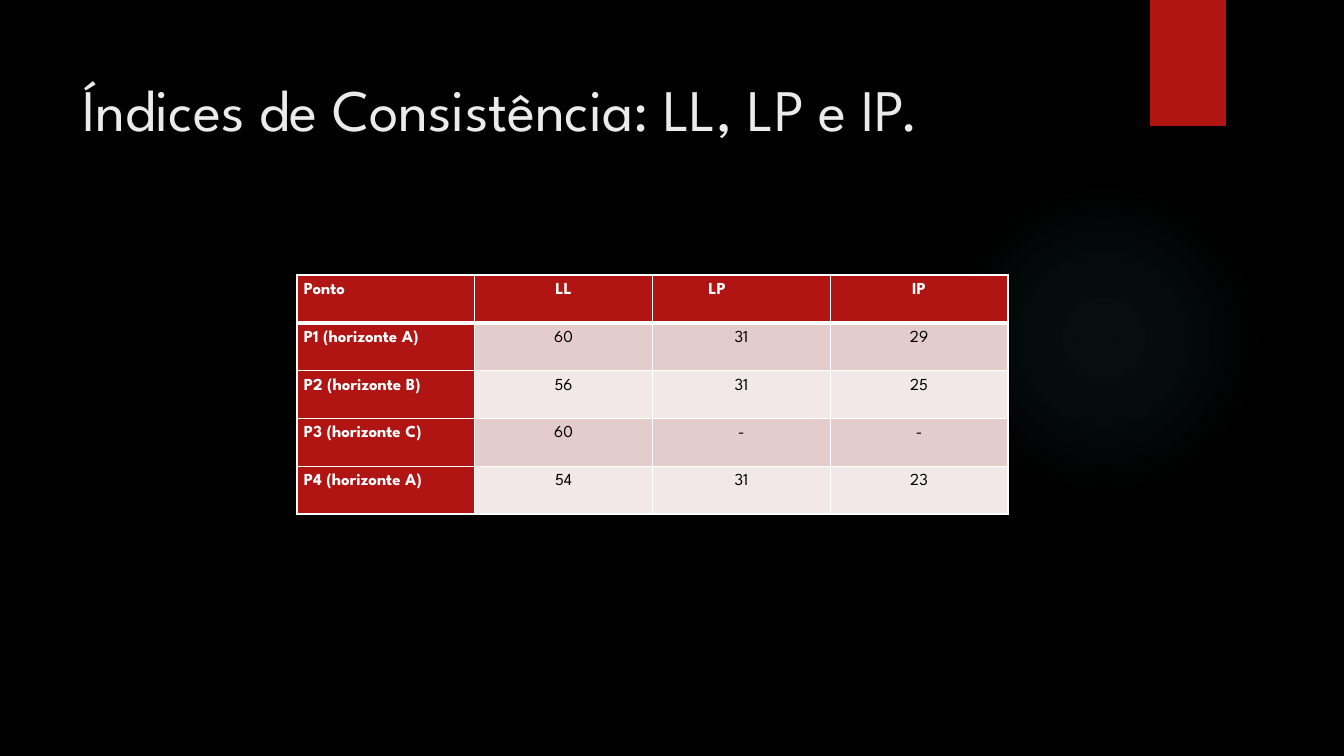
from lxml.etree import SubElement
from pptx import Presentation
from pptx.dml.color import RGBColor
from pptx.enum.shapes import MSO_SHAPE as Shape
from pptx.enum.text import MSO_ANCHOR as Anchor, PP_ALIGN as Align
from pptx.oxml import parse_xml
from pptx.oxml.ns import nsdecls, qn
from pptx.util import Pt

TITLE = "Índices de Consistência: LL, LP e IP."
INDICES = [
    ("Ponto", "LL", "LP", "IP"),
    ("P1 (horizonte A)", "60", "31", "29"),
    ("P2 (horizonte B)", "56", "31", "25"),
    ("P3 (horizonte C)", "60", "-", "-"),
    ("P4 (horizonte A)", "54", "31", "23"),
]
GLOW_STOPS = [(0, 7), (36, 6), (69, 0)]

FONT = "League Spartan"
BLACK = RGBColor(0x00, 0x00, 0x00)
WHITE = RGBColor(0xFF, 0xFF, 0xFF)
PALE = RGBColor(0xEB, 0xEB, 0xEB)
RED = RGBColor(0xB0, 0x15, 0x13)
ROSE = RGBColor(0xE4, 0xCC, 0xCC)
BLUSH = RGBColor(0xF2, 0xE8, 0xE7)
TEAL = RGBColor(0x50, 0xB9, 0xC1)

SLIDE_SIZE = (1344, 756)
TITLE_BOX = (72, 50, 1037, 154)
GLOW_BOX = (949, 184, 310, 310)
RIBBON_BOX = (1150, 0, 76, 126)
TABLE_BOX = (297, 275, 711, 239)
CELL_INSET = 7
LP_INDENT = 49


def px(length):
    return round(length * 914400 / 100.8)


def box(lengths):
    return [px(length) for length in lengths]


def write(frame, text, size, color, bold=False, align=Align.LEFT, spacing=1.0, indent=0):
    paragraph = frame.paragraphs[0]
    paragraph.alignment = align
    paragraph.line_spacing = spacing
    paragraph.space_before = Pt(0)
    if indent:
        paragraph._p.get_or_add_pPr().set("indent", str(px(indent)))
    run = paragraph.add_run()
    run.text = text
    run.font.name = FONT
    run.font.size = Pt(size)
    run.font.bold = bold
    run.font.color.rgb = color


def add_plain(kind, place):
    shape = slide.shapes.add_shape(kind, *box(place))
    shape.shadow.inherit = False
    shape.line.fill.background()
    return shape


def glow_gradient():
    stops = "".join(
        f'<a:gs pos="{at * 1000}"><a:srgbClr val="{TEAL}">'
        f'<a:alpha val="{alpha * 1000}"/></a:srgbClr></a:gs>'
        for at, alpha in GLOW_STOPS
    )
    return parse_xml(
        f'<a:gradFill {nsdecls("a")}><a:gsLst>{stops}</a:gsLst><a:path path="circle">'
        '<a:fillToRect l="50000" t="50000" r="50000" b="50000"/></a:path></a:gradFill>'
    )


def set_borders(cell, widths):
    properties = cell._tc.get_or_add_tcPr()
    for place, (side, width) in enumerate(widths.items()):
        line = SubElement(properties, qn(f"a:ln{side}"), w=str(Pt(width)))
        fill = SubElement(line, qn("a:solidFill"))
        SubElement(fill, qn("a:srgbClr"), val=str(WHITE))
        properties.insert(place, line)


presentation = Presentation()
presentation.slide_width, presentation.slide_height = box(SLIDE_SIZE)
slide = presentation.slides.add_slide(presentation.slide_layouts[5])
slide.background.fill.solid()
slide.background.fill.fore_color.rgb = BLACK

glow = add_plain(Shape.OVAL, GLOW_BOX)
glow.fill.background()
glow_properties = glow._element.spPr
glow_properties.replace(glow_properties.find(qn("a:noFill")), glow_gradient())

ribbon = add_plain(Shape.RECTANGLE, RIBBON_BOX)
ribbon.fill.solid()
ribbon.fill.fore_color.rgb = RED

title = slide.shapes.title
title.left, title.top, title.width, title.height = box(TITLE_BOX)
title.text_frame.vertical_anchor = Anchor.TOP
title.text_frame.margin_top = px(23)
write(title.text_frame, TITLE, 42, PALE)

rows, columns = len(INDICES), len(INDICES[0])
table = slide.shapes.add_table(rows, columns, *box(TABLE_BOX)).table
for column in table.columns:
    column.width = px(TABLE_BOX[2] / columns)
for row in table.rows:
    row.height = px(TABLE_BOX[3] / rows)

for r, values in enumerate(INDICES):
    for c, value in enumerate(values):
        cell = table.cell(r, c)
        heading = r == 0 or c == 0
        justified = c == 0 or value == "LP"
        cell.margin_left = cell.margin_right = px(CELL_INSET)
        cell.margin_top = cell.margin_bottom = 0
        cell.vertical_anchor = Anchor.TOP
        cell.fill.solid()
        cell.fill.fore_color.rgb = RED if heading else (BLUSH, ROSE)[r % 2]
        set_borders(cell, {"L": 1, "R": 1, "T": 3 if r == 1 else 1, "B": 3 if r == 0 else 1})
        write(cell.text_frame, value, 12, WHITE if heading else BLACK, bold=heading,
              align=Align.JUSTIFY if justified else Align.CENTER, spacing=1.5,
              indent=LP_INDENT if value == "LP" else 0)

presentation.save("out.pptx")
